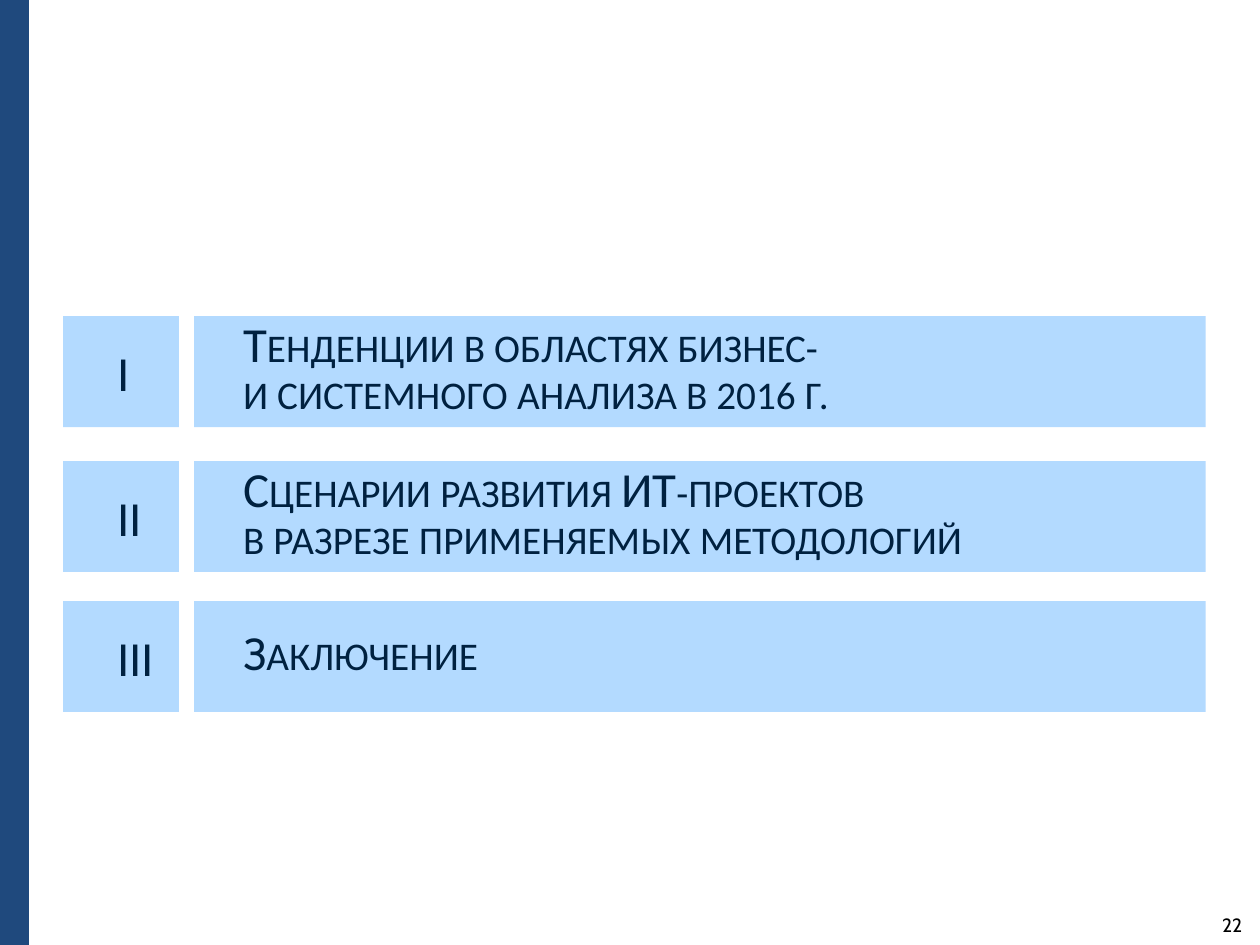
from dataclasses import dataclass

from pptx import Presentation
from pptx import util as u
from pptx.dml.color import RGBColor
from pptx.enum import shapes, text


@dataclass(frozen=True)
class Theme:
    stripe: RGBColor = RGBColor(0x1F, 0x49, 0x7D)
    panel: RGBColor = RGBColor(0xB3, 0xDA, 0xFF)
    ink: RGBColor = RGBColor(0x00, 0x21, 0x40)
    black: RGBColor = RGBColor(0, 0, 0)
    agenda_font: str = "Calibri"
    number_font: str = "Cabin"
    agenda_size: int = 28
    number_size: int = 11


@dataclass(frozen=True)
class AgendaItem:
    numeral: str
    lines: tuple[str, ...]
    top: float


THEME = Theme()
ROW_HEIGHT = 0.88
AGENDA = (
    AgendaItem("I", ("Тенденции в областях бизнес-", "и системного анализа в 2016 г."), 2.51),
    AgendaItem("II", ("Сценарии развития ИТ-проектов", "в разрезе применяемых методологий"), 3.66),
    AgendaItem("III", ("Заключение",), 4.77),
)


def write_text(shape, lines, *, font, size, color, align=text.PP_ALIGN.LEFT,
               anchor=text.MSO_ANCHOR.MIDDLE, insets=(0, 0, 0, 0),
               spacing=1.0, small_caps=False, wrap=True) -> None:
    """Fill a shape with one paragraph, broken into the given lines."""
    frame = shape.text_frame
    frame.word_wrap = wrap
    frame.vertical_anchor = anchor
    (frame.margin_left, frame.margin_top,
     frame.margin_right, frame.margin_bottom) = map(u.Inches, insets)
    paragraph = frame.paragraphs[0]
    paragraph.alignment = align
    paragraph.line_spacing = spacing
    for index, line in enumerate(lines):
        if index:
            paragraph.add_line_break()
        run = paragraph.add_run()
        run.text = line
        run.font.name = font
        run.font.size = u.Pt(size)
        run.font.color.rgb = color
        if small_caps:
            run._r.get_or_add_rPr().set("cap", "small")


def add_panel(slide, left: float, top: float, width: float, height: float, color: RGBColor):
    """Add a plain filled rectangle."""
    shape = slide.shapes.add_shape(
        shapes.MSO_SHAPE.RECTANGLE, *map(u.Inches, (left, top, width, height)))
    shape.fill.solid()
    shape.fill.fore_color.rgb = color
    shape.line.fill.background()
    shape.shadow.inherit = False
    return shape


def add_agenda_row(slide, item: AgendaItem) -> None:
    """Add the numeral box and the topic bar of one agenda item."""
    style = dict(font=THEME.agenda_font, size=THEME.agenda_size,
                 color=THEME.ink, small_caps=True)
    topic = add_panel(slide, 1.54, item.top, 8.03, ROW_HEIGHT, THEME.panel)
    write_text(topic, item.lines, insets=(0.39, 0.05, 0.1, 0.05), spacing=0.8, **style)
    # Numerals share a left edge at the middle of their box
    numeral = add_panel(slide, 0.5, item.top, 0.92, ROW_HEIGHT, THEME.panel)
    write_text(numeral, (item.numeral,), insets=(0.43, 0.05, 0, 0.05), **style)


def main() -> None:
    presentation = Presentation()
    presentation.slide_width = u.Inches(10)
    presentation.slide_height = u.Inches(7.5)
    # The slide has no title, so it takes the blank layout
    slide = presentation.slides.add_slide(presentation.slide_layouts[6])

    # Side stripe
    add_panel(slide, 0, 0, 0.23, 7.5, THEME.stripe)

    # Slide number
    number = slide.shapes.add_textbox(*map(u.Inches, (9.1, 7.25, 0.8, 0.28)))
    write_text(number, ("22",), font=THEME.number_font, size=THEME.number_size,
               color=THEME.black, align=text.PP_ALIGN.RIGHT,
               anchor=text.MSO_ANCHOR.TOP, insets=(0, 0, 0.04, 0))

    # Agenda
    for item in AGENDA:
        add_agenda_row(slide, item)

    presentation.save("out.pptx")


if __name__ == "__main__":
    main()
